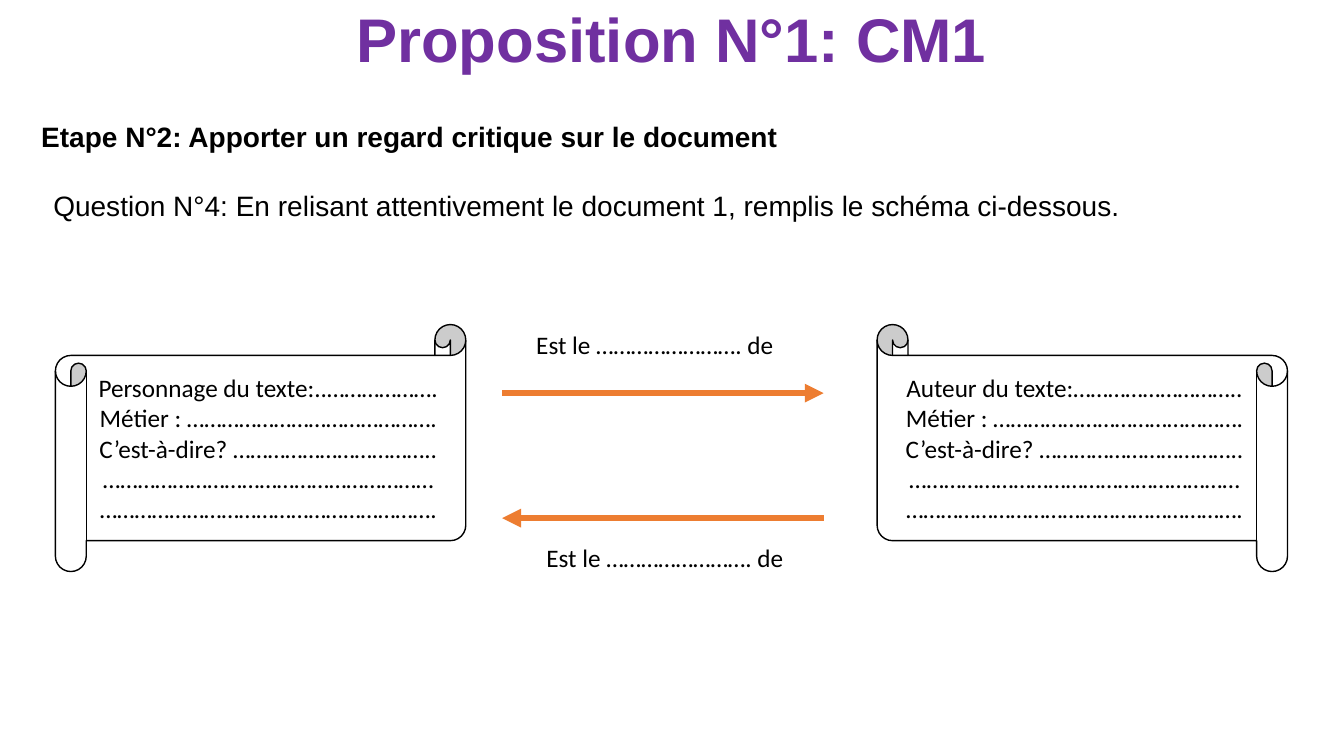
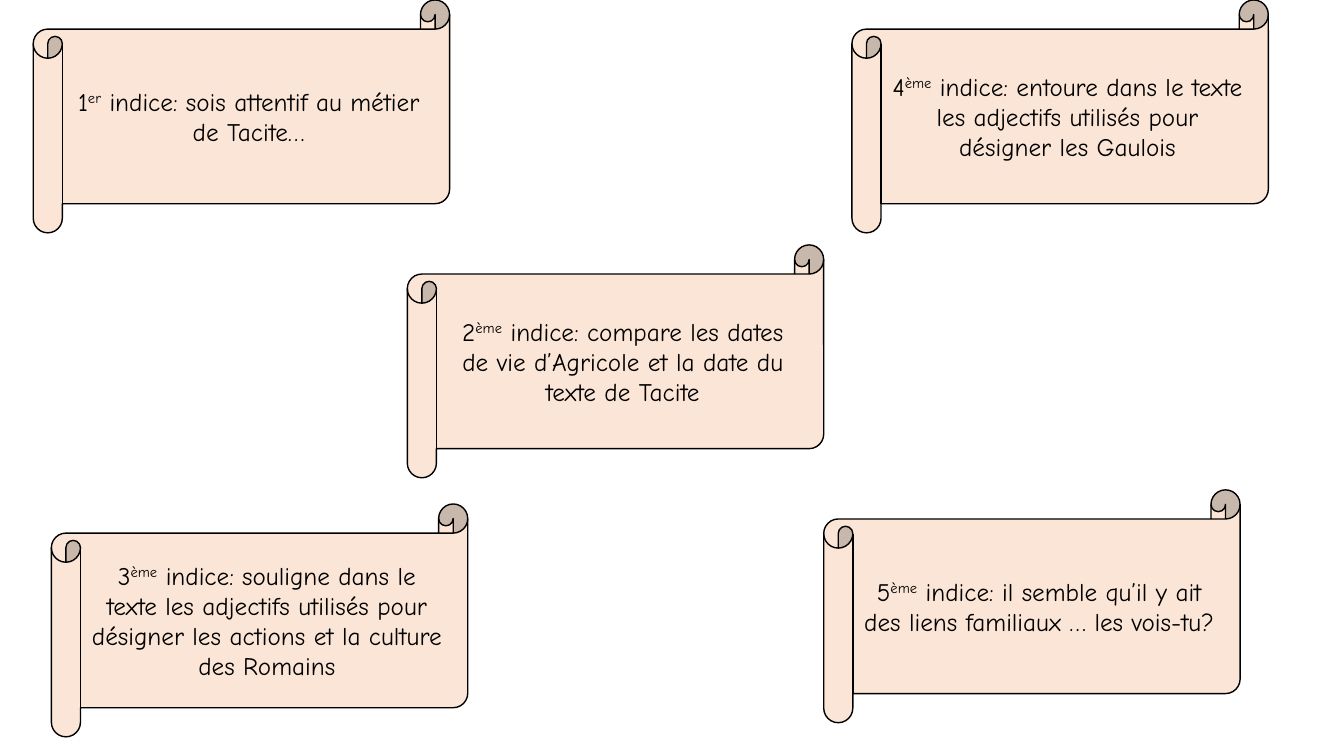
from pptx import Presentation
from pptx import util as u
from pptx.dml.color import RGBColor
from pptx.enum import shapes, text
from pptx.oxml.ns import qn
from lxml import etree

PX = 9144  # EMU per px, 100 px to the inch


def color(hex_code):
    return RGBColor.from_string(hex_code)


class Deck:
    """Shared style, and the slide being built."""
    BLACK, WHITE = "000000", "FFFFFF"
    PURPLE, ORANGE, PEACH = "7030A0", "ED7D31", "FBE5D6"
    HEADING, BODY, CLUE = "Arial", "Calibri", "Comic Neue"
    TITLE_ONLY, BLANK = 5, 6

    def __init__(self):
        self.prs = Presentation()
        self.prs.slide_width, self.prs.slide_height = 1333 * PX, 750 * PX

    def new_slide(self, layout):
        self.slide = self.prs.slides.add_slide(self.prs.slide_layouts[layout])

    def style(self, p, size, font, hex_code=BLACK, bold=False, align=None):
        p.alignment = align
        for r in p.runs:
            r.font.size, r.font.name, r.font.bold = u.Pt(size), font, bold
            r.font.color.rgb = color(hex_code)

    def title(self, words, x, y, w, h):
        s = self.slide.shapes.title
        s.left, s.top, s.width, s.height = (v * PX for v in (x, y, w, h))
        tf = s.text_frame
        tf.text = words
        tf.auto_size = text.MSO_AUTO_SIZE.NONE
        tf.vertical_anchor = text.MSO_ANCHOR.MIDDLE
        p = tf.paragraphs[0]
        p.line_spacing = 0.9
        self.style(p, 44, self.HEADING, self.PURPLE, True, text.PP_ALIGN.CENTER)

    def label(self, words, x, y, w, h, size=18, font=BODY, bold=False, align=None):
        s = self.slide.shapes.add_textbox(x * PX, y * PX, w * PX, h * PX)
        tf = s.text_frame
        tf.text = words
        tf.word_wrap = True
        tf.auto_size = text.MSO_AUTO_SIZE.SHAPE_TO_FIT_TEXT
        self.style(tf.paragraphs[0], size, font, bold=bold, align=align)

    def scroll(self, x, y, w, h, fill, flip=False):
        s = self.slide.shapes.add_shape(
            shapes.MSO_SHAPE.HORIZONTAL_SCROLL, x * PX, y * PX, w * PX, h * PX)
        s.shadow.inherit = False
        s.fill.solid()
        s.fill.fore_color.rgb = color(fill)
        s.line.color.rgb = color(self.BLACK)
        s.line.width = u.Pt(1)
        if flip:
            s._element.spPr.xfrm.set("flipH", "1")
        s.text_frame.vertical_anchor = text.MSO_ANCHOR.MIDDLE
        return s.text_frame

    def form(self, x, heading, flip=False):
        tf = self.scroll(x, 322, 407, 245, self.WHITE, flip)
        tf.text = "\n".join([heading, *BLANKS])
        for p in tf.paragraphs:
            self.style(p, 18, self.BODY, align=text.PP_ALIGN.CENTER)

    def clue(self, number, words, x, y):
        p = self.scroll(x, y, 413, 231, self.PEACH).paragraphs[0]
        suffix = "er" if number == 1 else "ème"
        for part in (str(number), suffix, " indice: " + words):
            p.add_run().text = part
        p.runs[1]._r.get_or_add_rPr().set("baseline", "30000")
        self.style(p, 18, self.CLUE, align=text.PP_ALIGN.CENTER)

    def arrow(self, x1, x2, y):
        s = self.slide.shapes.add_connector(
            shapes.MSO_CONNECTOR.STRAIGHT, x1 * PX, y * PX, x2 * PX, y * PX)
        s.line.color.rgb = color(self.ORANGE)
        s.line.width = u.Pt(4.5)
        spPr = s._element.spPr
        etree.SubElement(spPr.find(qn("a:ln")), qn("a:tailEnd"), type="triangle")
        etree.SubElement(spPr, qn("a:effectLst"))


BLANKS = [
    "Métier : …………………………………….",
    "C’est-à-dire? ……………………………..",
    "…………………………………………………………………………………………………….",
]
RELATION = "Est le ……………………. de"
CLUES = [  # words, left, top
    ("sois attentif au métier de Tacite…", 33, 0),
    ("compare les dates de vie d’Agricole et la date du texte de Tacite", 404, 243),
    ("souligne dans le texte les adjectifs utilisés pour désigner "
     "les actions et la culture des Romains", 51, 500),
    ("entoure dans le texte les adjectifs utilisés pour désigner les Gaulois", 845, 0),
    ("il semble qu’il y ait des liens familiaux … les vois-tu?", 817, 486),
]


def main():
    deck = Deck()

    # Diagram to fill in
    deck.new_slide(Deck.TITLE_ONLY)
    deck.title("Proposition N°1: CM1", 0, -2, 1333, 89)
    deck.label("Etape N°2: Apporter un regard critique sur le document",
               31, 114, 1272, 44, 20, Deck.HEADING, bold=True)
    deck.label("Question N°4: En relisant attentivement le document 1, "
               "remplis le schéma ci-dessous.",
               43, 182, 1211, 44, 20, Deck.HEADING, align=text.PP_ALIGN.JUSTIFY)
    deck.form(55, "Personnage du texte:..……………….")
    deck.form(870, "Auteur du texte:………………………..", flip=True)

    # Relations between the two people
    deck.arrow(498, 817, 390)
    deck.arrow(817, 498, 514)
    deck.label(RELATION, 522, 322, 270, 40)
    deck.label(RELATION, 532, 533, 270, 40)

    # Clues
    deck.new_slide(Deck.BLANK)
    for number, (words, x, y) in enumerate(CLUES, 1):
        deck.clue(number, words, x, y)

    deck.prs.save("out.pptx")


if __name__ == "__main__":
    main()
